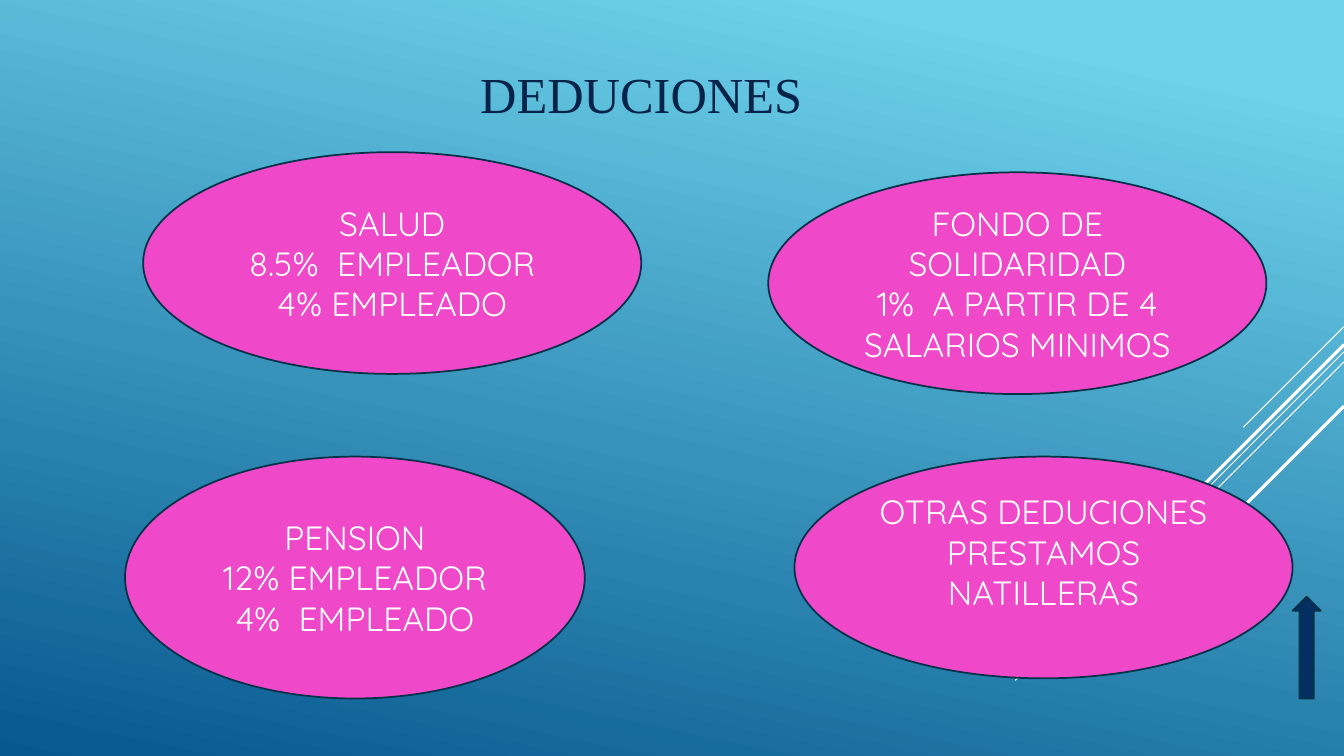
from dataclasses import dataclass

from lxml import etree
from pptx import Presentation
from pptx.dml.color import RGBColor
from pptx.enum import shapes, text
from pptx.oxml import ns
from pptx.util import Inches, Pt


@dataclass(frozen=True)
class Theme:
    sky: RGBColor = RGBColor.from_string("6ED2EB")
    deep: RGBColor = RGBColor.from_string("06588E")
    white: RGBColor = RGBColor.from_string("FFFFFF")
    pink: RGBColor = RGBColor.from_string("EF48C9")
    outline: RGBColor = RGBColor.from_string("043148")
    arrow: RGBColor = RGBColor.from_string("052F61")
    title: RGBColor = RGBColor.from_string("042349")
    title_font: str = "Times New Roman"
    body_font: str = "Quicksand"
    title_size: Pt = Pt(36)
    body_size: Pt = Pt(24)
    outline_width: Pt = Pt(1.25)


theme = Theme()
WIDTH = 13.33

presentation = Presentation()
presentation.slide_width = Inches(WIDTH)
presentation.slide_height = Inches(7.5)
slide = presentation.slides.add_slide(presentation.slide_layouts[5])

# Background
background = slide.background.fill
background.gradient()
background.gradient_angle = 258
stops = ((0.1, theme.sky), (1, theme.deep))
for stop, (position, color) in zip(background.gradient_stops, stops):
    stop.position = position
    stop.color.rgb = color

# Diagonal rays at 45 degrees from the right edge: start height, run, line width
rays = (
    (3.24, 1.00, 0.75),
    (3.49, 3.26, 0.75),
    (3.59, 2.07, 0.75),
    (3.42, 1.91, 2.25),
    (4.03, 1.39, 2.25),
)
for top, run, width in rays:
    ray = slide.shapes.add_connector(
        shapes.MSO_CONNECTOR.STRAIGHT,
        Inches(WIDTH), Inches(top), Inches(WIDTH - run), Inches(top + run),
    )
    ray.line.color.rgb = theme.white
    ray.line.width = Pt(width)
    etree.SubElement(ray._element.spPr, ns.qn("a:effectLst"))

# Title
title = slide.shapes.title
title.left, title.top = Inches(1.8), Inches(0)
title.width, title.height = Inches(9.12), Inches(1.86)
title.text_frame.text = "DEDUCIONES"
title.text_frame.vertical_anchor = text.MSO_ANCHOR.MIDDLE
heading = title.text_frame.paragraphs[0]
heading.alignment = text.PP_ALIGN.CENTER
heading.font.name = theme.title_font
heading.font.size = theme.title_size
heading.font.color.rgb = theme.title


def add_outlined_shape(kind, box, color):
    shape = slide.shapes.add_shape(kind, *map(Inches, box))
    shape.shadow.inherit = False
    shape.fill.solid()
    shape.fill.fore_color.rgb = color
    shape.line.color.rgb = theme.outline
    shape.line.width = theme.outline_width
    return shape


# Deductions: box, bottom inset, lines
deductions = (
    ((7.62, 1.71, 4.94, 2.2), 0.05,
     ("FONDO DE SOLIDARIDAD", "1%  A PARTIR DE 4 SALARIOS MINIMOS")),
    ((1.42, 1.51, 4.94, 2.2), 0.05,
     ("SALUD", "8.5%  EMPLEADOR", "4% EMPLEADO")),
    ((1.24, 4.53, 4.56, 2.4), 0.05,
     ("PENSION", "12% EMPLEADOR", "4%  EMPLEADO")),
    ((7.88, 4.53, 4.94, 2.2), 0.36,
     ("OTRAS DEDUCIONES", "PRESTAMOS", "NATILLERAS")),
)
for box, bottom_inset, lines in deductions:
    ellipse = add_outlined_shape(shapes.MSO_SHAPE.OVAL, box, theme.pink)
    frame = ellipse.text_frame
    frame.text = "\n".join(lines)
    frame.word_wrap = True
    frame.vertical_anchor = text.MSO_ANCHOR.MIDDLE
    frame.margin_bottom = Inches(bottom_inset)
    for paragraph in frame.paragraphs:
        paragraph.alignment = text.PP_ALIGN.CENTER
        paragraph.font.name = theme.body_font
        paragraph.font.size = theme.body_size
        paragraph.font.color.rgb = theme.white

add_outlined_shape(shapes.MSO_SHAPE.UP_ARROW, (12.82, 5.92, 0.28, 1.01), theme.arrow)

presentation.save("out.pptx")
